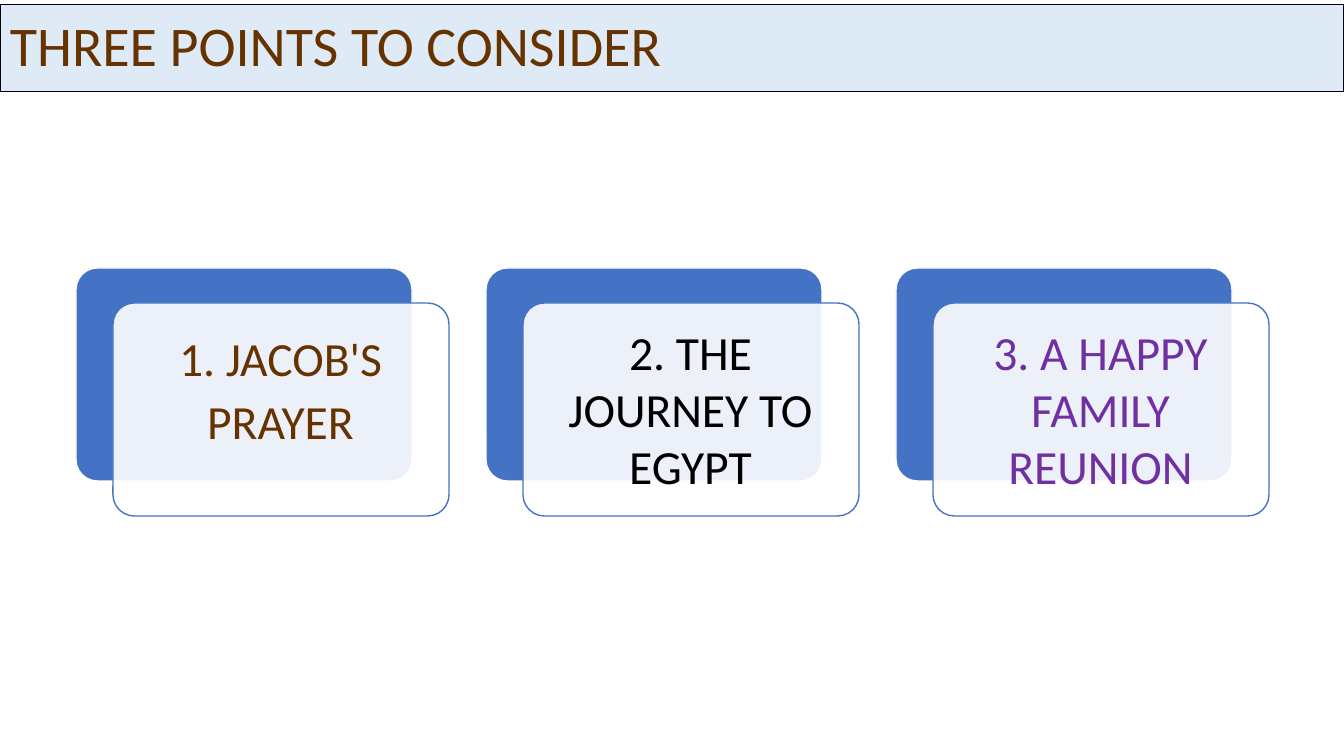
from lxml import etree
from pptx import Presentation
from pptx.dml.color import RGBColor
from pptx.enum.shapes import MSO_SHAPE
from pptx.enum.text import MSO_ANCHOR, PP_ALIGN
from pptx.oxml.ns import qn
from pptx.util import Pt

RECT, ROUNDED = MSO_SHAPE.RECTANGLE, MSO_SHAPE.ROUNDED_RECTANGLE
TOP, MIDDLE = MSO_ANCHOR.TOP, MSO_ANCHOR.MIDDLE
CENTER, JUSTIFY = PP_ALIGN.CENTER, PP_ALIGN.JUSTIFY

# Content
TITLE = "THREE POINTS TO CONSIDER"
POINTS = [  # wording, colour, line spacing
    ("1. JACOB'S PRAYER", "brown", 1.1),
    ("2. THE JOURNEY TO EGYPT", "black", 1.0),
    ("3. A HAPPY FAMILY REUNION", "purple", 1.0),
]

COLORS = {
    "brown": "663300",
    "black": "000000",
    "purple": "7030A0",
    "blue": "4472C4",
    "pale": "DEEBF7",
    "white": "FFFFFF",
}

# Layout in px
EMU_PER_PX = 914400 / 100.8
PAGE = (1344, 756)
TITLE_BAR = (0, 5, 1344, 87)
CARD_LEFT, CARD_TOP, CARD_STEP = 76, 268, 410
CARD_SIZE = (336, 213)
FRONT_SHIFT = (37, 35)
TEXT_SHIFT, TEXT_SIZE = (43, 41), (323, 201)
TEXT_INSET = 14


def px(value):
    return round(value * EMU_PER_PX)


def color(name):
    return RGBColor.from_string(COLORS[name])


def add_panel(page, kind, area, fill, line, line_width):
    panel = page.shapes.add_shape(kind, *map(px, area))
    panel.shadow.inherit = False
    panel.fill.solid()
    panel.fill.fore_color.rgb = color(fill)
    panel.line.color.rgb = color(line)
    panel.line.width = Pt(line_width)
    if kind == ROUNDED:
        panel.adjustments[0] = 0.1
    return panel


def set_alpha(shape, percent):
    tint = shape.fill._xPr.find(qn("a:solidFill"))[0]
    etree.SubElement(tint, qn("a:alpha")).set("val", str(percent * 1000))


def write(box, wording, ink, size, anchor, align, spacing):
    frame = box.text_frame
    frame.word_wrap = True
    frame.vertical_anchor = anchor
    para = frame.paragraphs[0]
    para.alignment = align
    para.line_spacing = spacing
    span = para.add_run()
    span.text = wording
    for name, value in {"name": "Calibri", "size": Pt(size)}.items():
        setattr(span.font, name, value)
    span.font.color.rgb = color(ink)


deck = Presentation()
deck.slide_width, deck.slide_height = map(px, PAGE)
page = deck.slides.add_slide(deck.slide_layouts[6])

# Title bar
bar = add_panel(page, RECT, TITLE_BAR, "pale", "black", 0.75)
write(bar, TITLE, "brown", 40, MIDDLE, JUSTIFY, 0.9)

# Cards: blue back, translucent front, text
for index, (wording, ink, spacing) in enumerate(POINTS):
    left = CARD_LEFT + index * CARD_STEP

    def shifted(shift, size):
        return (left + shift[0], CARD_TOP + shift[1], *size)

    add_panel(page, ROUNDED, shifted((0, 0), CARD_SIZE), "blue", "white", 1)
    front = add_panel(page, ROUNDED, shifted(FRONT_SHIFT, CARD_SIZE), "white", "blue", 1)
    set_alpha(front, 90)

    box = page.shapes.add_textbox(*map(px, shifted(TEXT_SHIFT, TEXT_SIZE)))
    for side in ("left", "top", "right", "bottom"):
        setattr(box.text_frame, f"margin_{side}", px(TEXT_INSET))
    write(box, wording, ink, 34, TOP, CENTER, spacing)

deck.save("out.pptx")
